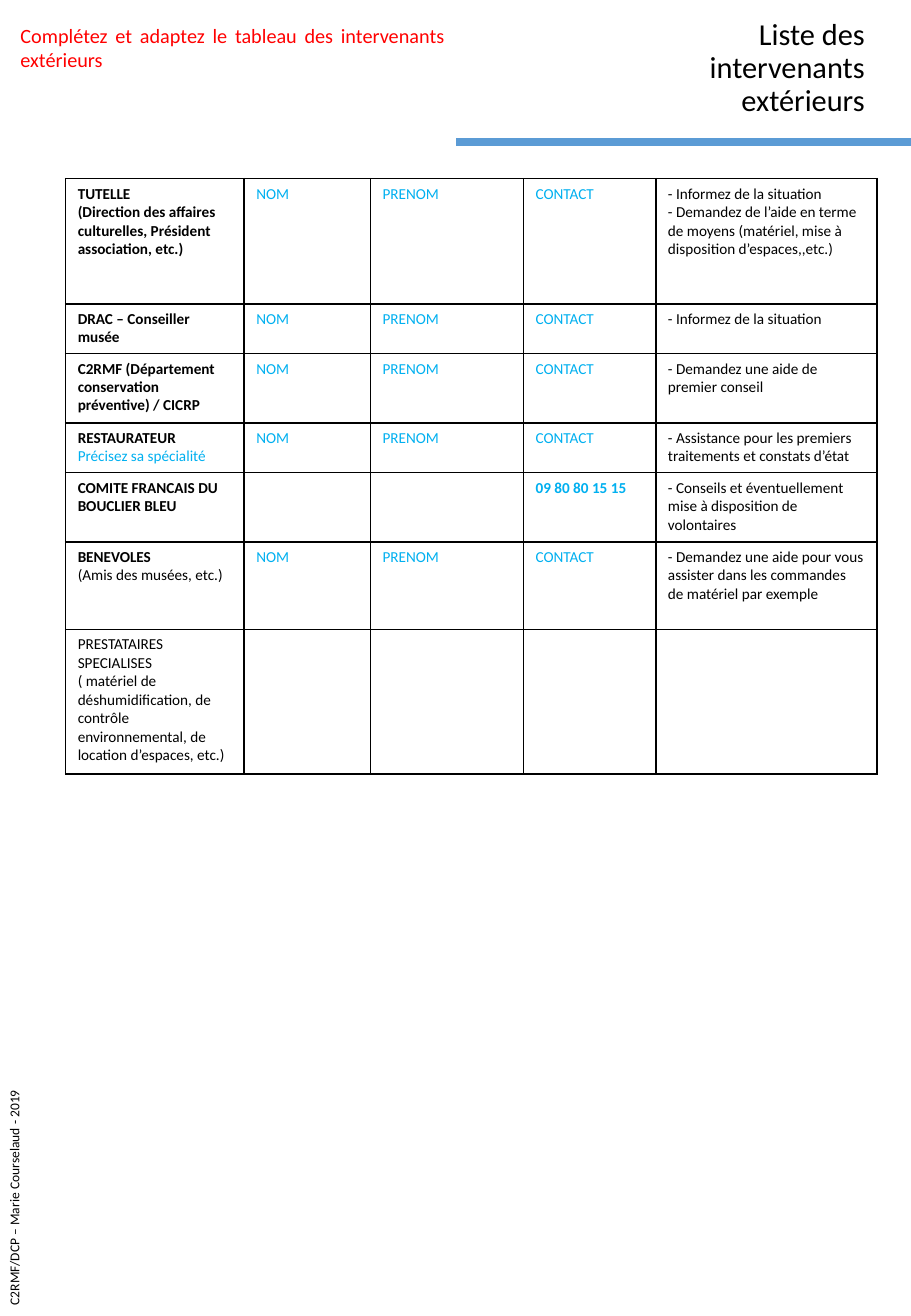
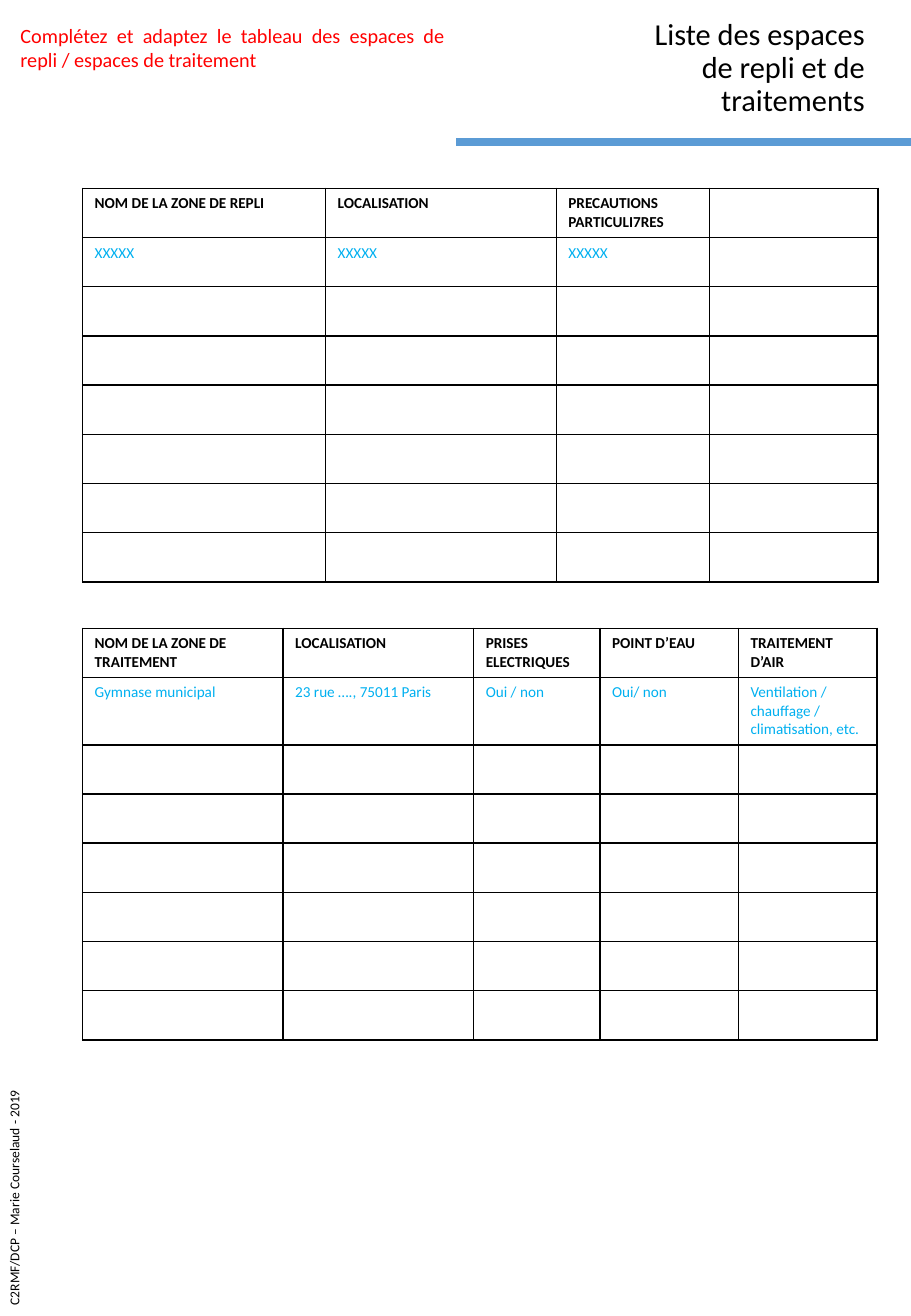
from dataclasses import dataclass

from lxml import etree
from pptx import Presentation
from pptx import util as u
from pptx.dml import color
from pptx.enum import shapes, text
from pptx.oxml import ns

UNIT = u.Inches(0.1)  # one grid column or row
COLUMNS, ROWS = 75, 108.3


def grid(*steps):
    return [round(step * UNIT) for step in steps]


def assign(target, values):
    for name, value in values.items():
        setattr(target, name, value)


@dataclass(frozen=True)
class Theme:
    font: str = "Calibri"
    black: str = "000000"
    red: str = "FF0000"
    cyan: str = "00B0F0"
    blue: str = "5B9BD5"
    rule_width: float = 4.75
    border_width: float = 1

    def style(self, role):
        """Return size, colour and weight for a role of text."""
        return {
            "title": (18, self.black, False),
            "advice": (12, self.red, False),
            "credit": (8, self.black, False),
            "label": (9, self.black, True),
            "plain": (9, self.black, False),
            "entry": (9, self.cyan, False),
            "phone": (9, self.cyan, True),
        }[role]


class Deck:
    def __init__(self, theme):
        self.theme = theme
        self.prs = Presentation()
        self.prs.slide_width, self.prs.slide_height = grid(COLUMNS, ROWS)
        self.slide = None

    def set_lines(self, frame, lines, **layout):
        """Fill a text frame with (role, words) lines, one paragraph each."""
        for i, (role, words) in enumerate(lines):
            paragraph = frame.add_paragraph() if i else frame.paragraphs[0]
            assign(paragraph, layout)
            run = paragraph.add_run()
            run.text = words
            size, rgb, bold = self.theme.style(role)
            assign(run.font, {"name": self.theme.font, "size": u.Pt(size), "bold": bold})
            run.font.color.rgb = color.RGBColor.from_string(rgb)

    def page(self, title, advice):
        """Start a slide with the title, rule, advice and credit all pages share."""
        self.slide = self.prs.slides.add_slide(self.prs.slide_layouts[0])
        subtitle = self.slide.placeholders[1].element
        subtitle.getparent().remove(subtitle)
        self.title(title)
        self.rule(COLUMNS, COLUMNS / 2, 11.7)
        self.label((0.7, 1.4, 36.9, 5), "advice", advice,
                   alignment=text.PP_ALIGN.JUSTIFY)
        credit = self.label((-10, 96, 22.4, 2.4), "credit",
                            "C2RMF/DCP – Marie Courselaud - 2019")
        credit.rotation = 270

    def title(self, words):
        heading = self.slide.shapes.title
        left, top, width, height = grid(50.2, 2.2, 22, 8)
        assign(heading, {"left": left, "top": top, "width": width, "height": height})
        assign(heading.text_frame, {
            "word_wrap": True,
            "auto_size": text.MSO_AUTO_SIZE.NONE,
            "vertical_anchor": text.MSO_ANCHOR.BOTTOM,
        })
        self.set_lines(heading.text_frame, [("title", words)],
                       alignment=text.PP_ALIGN.RIGHT, line_spacing=0.9)

    def rule(self, start, end, row):
        rule = self.slide.shapes.add_connector(
            shapes.MSO_CONNECTOR.STRAIGHT, *grid(start, row, end, row))
        rule.line.color.rgb = color.RGBColor.from_string(self.theme.blue)
        rule.line.width = u.Pt(self.theme.rule_width)
        etree.SubElement(rule._element.spPr, ns.qn("a:effectLst"))

    def label(self, at, role, words, **layout):
        box = self.slide.shapes.add_textbox(*grid(*at))
        box.text_frame.word_wrap = True
        self.set_lines(box.text_frame, [(role, words)], **layout)
        return box

    def table(self, left, top, widths, heights, content):
        """Draw a ruled table; rows beyond the content stay empty."""
        table = self.slide.shapes.add_table(
            len(heights), len(widths),
            *grid(left, top, sum(widths), sum(heights))).table
        assign(table, {"first_row": False, "horz_banding": False})
        for column, width in zip(table.columns, grid(*widths)):
            column.width = width
        for row, height in zip(table.rows, grid(*heights)):
            row.height = height
        for cell in table.iter_cells():
            self.border(cell)
            cell.fill.background()
        for r, line in enumerate(content):
            for c, paragraphs in enumerate(line):
                self.set_lines(table.cell(r, c).text_frame, paragraphs)

    def border(self, cell):
        properties = cell._tc.get_or_add_tcPr()
        for side in ("a:lnL", "a:lnR", "a:lnT", "a:lnB"):
            edge = etree.SubElement(properties, ns.qn(side),
                                    w=str(int(u.Pt(self.theme.border_width))))
            fill = etree.SubElement(edge, ns.qn("a:solidFill"))
            etree.SubElement(fill, ns.qn("a:srgbClr"), val=self.theme.black)


def cells(role, *words):
    """Make single-line cells that share a role."""
    return [[(role, word)] for word in words]


def partner(name, *tasks):
    """Make a row with the fields to complete between name and tasks."""
    return [name, *cells("entry", "NOM", "PRENOM", "CONTACT"),
            [("plain", task) for task in tasks]]


PARTNERS = [
    partner([("label", "TUTELLE"),
             ("label", "(Direction des affaires culturelles, Président association, etc.)")],
            "- Informez de la situation",
            "- Demandez de l’aide en terme de moyens (matériel, mise à "
            "disposition d’espaces,,etc.)"),
    partner([("label", "DRAC – Conseiller musée")], "- Informez de la situation"),
    partner([("label", "C2RMF (Département conservation préventive) / CICRP")],
            "- Demandez une aide de premier conseil"),
    partner([("label", "RESTAURATEUR"), ("entry", "Précisez sa spécialité")],
            "- Assistance pour les premiers traitements et constats d’état"),
    [[("label", "COMITE FRANCAIS DU BOUCLIER BLEU")], [], [],
     [("phone", "09 80 80 15 15")],
     [("plain", "- Conseils et éventuellement mise à disposition de volontaires")]],
    partner([("label", "BENEVOLES"), ("plain", "(Amis des musées, etc.)")],
            "- Demandez une aide pour vous assister dans les commandes de "
            "matériel par exemple"),
    [[("plain", "PRESTATAIRES SPECIALISES"),
      ("plain", "( matériel de déshumidification, de contrôle environnemental, "
                "de location d’espaces, etc.)")]],
]

FALLBACK_ZONES = [
    cells("label", "NOM DE LA ZONE DE REPLI", "LOCALISATION", "PRECAUTIONS PARTICULI7RES"),
    cells("entry", *["XXXXX"] * 3),
]

TREATMENT_ZONES = [
    cells("label", "NOM DE LA ZONE DE TRAITEMENT", "LOCALISATION",
          "PRISES ELECTRIQUES", "POINT D’EAU", "TRAITEMENT D’AIR"),
    cells("entry", "Gymnase municipal", "23 rue …., 75011 Paris", "Oui / non",
          "Oui/ non", "Ventilation / chauffage / climatisation, etc."),
]


def main():
    deck = Deck(Theme())

    # External partners
    deck.page("Liste des intervenants extérieurs",
              "Complétez et adaptez le tableau des intervenants extérieurs")
    deck.table(5.4, 14.7, [14.7, 10.4, 12.6, 10.9, 18.2],
               [10.3, 4.1, 5.7, 4.1, 5.7, 7.2, 11.9], PARTNERS)

    # Fallback and treatment areas
    deck.page("Liste des espaces de repli et de traitements",
              "Complétez et adaptez le tableau des espaces de repli / "
              "espaces de traitement")
    zone_row = 4.05
    deck.table(6.8, 15.5, [20, 19, 12.6, 13.9], [zone_row] * 8, FALLBACK_ZONES)
    deck.table(6.8, 51.7, [16.5, 15.7, 10.4, 11.4, 11.4],
               [zone_row, 5.55] + [zone_row] * 6, TREATMENT_ZONES)

    deck.prs.save("out.pptx")


if __name__ == "__main__":
    main()
